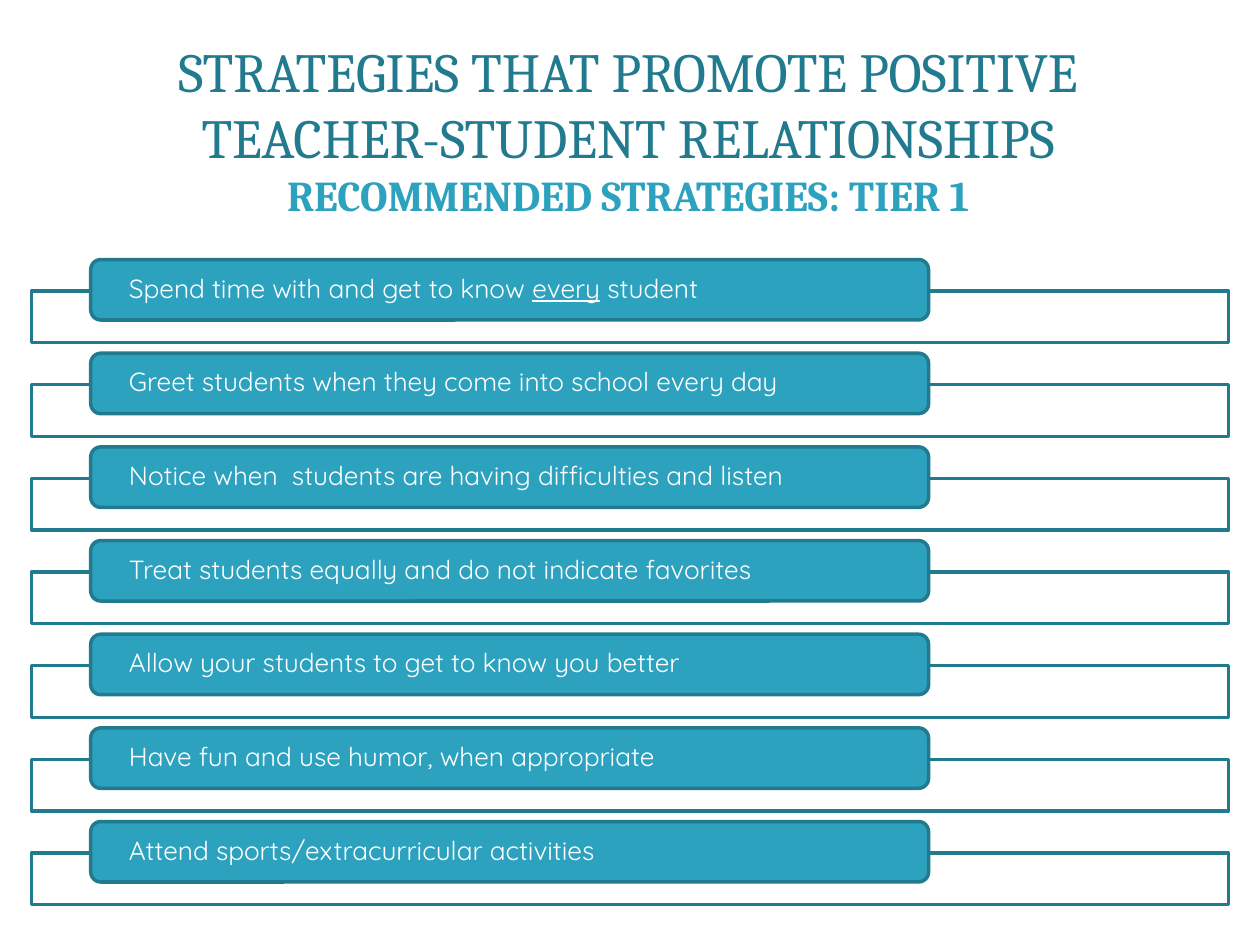
from dataclasses import dataclass

from pptx import Presentation
from pptx.dml.color import RGBColor
from pptx.enum.shapes import MSO_SHAPE
from pptx.enum.text import MSO_ANCHOR, MSO_AUTO_SIZE, PP_ALIGN
from pptx.util import Inches, Pt

RECT, PILL = MSO_SHAPE.RECTANGLE, MSO_SHAPE.ROUNDED_RECTANGLE
MIDDLE, LEFT, CENTER = MSO_ANCHOR.MIDDLE, PP_ALIGN.LEFT, PP_ALIGN.CENTER

TITLE = "STRATEGIES THAT PROMOTE POSITIVE TEACHER-STUDENT RELATIONSHIPS"
SUBTITLE = "RECOMMENDED STRATEGIES: TIER 1"
# Each strategy is a list of (text, underlined) runs.
STRATEGIES = [
    [("Spend time with and get to know ", False), ("every", True), (" student", False)],
    [("Greet students when they come into school every day", False)],
    [("Notice when  students are having difficulties and listen", False)],
    [("Treat students equally and do not indicate favorites", False)],
    [("Allow your students to get to know you better", False)],
    [("Have fun and use humor, when appropriate", False)],
    [("Attend sports/extracurricular activities", False)],
]


@dataclass(frozen=True)
class Theme:
    dark: RGBColor = RGBColor.from_string("227A8F")
    accent: RGBColor = RGBColor.from_string("2DA2BF")
    white: RGBColor = RGBColor.from_string("FFFFFF")
    heading_font: str = "Cambria"
    body_font: str = "Quicksand"
    title_size: float = 31.5
    subtitle_size: float = 24.3
    body_size: float = 15
    line_width: float = 2


THEME = Theme()
SLIDE_W, SLIDE_H = 10, 7.5
MARGIN = SLIDE_W / 40
FRAME_W, FRAME_H = SLIDE_W - 2 * MARGIN, 0.41
PILL_X, PILL_W, PILL_H = 0.72, 0.7 * FRAME_W, 0.48
PILL_RISE = 0.25
FIRST_Y, LAST_Y = 2.31, 6.77
PITCH = (LAST_Y - FIRST_Y) / (len(STRATEGIES) - 1)
TEXT_INSET = 0.28


def add_box(slide, kind, x, y, w, h, fill):
    s = slide.shapes.add_shape(kind, Inches(x), Inches(y), Inches(w), Inches(h))
    s.shadow.inherit = False
    s.fill.solid()
    s.fill.fore_color.rgb = fill
    s.line.color.rgb = THEME.dark
    s.line.width = Pt(THEME.line_width)
    return s


def format_title(title):
    title.left, title.top = Inches(0.47), Inches(0.45)
    title.width, title.height = Inches(9.03), Inches(1.14)
    tf = title.text_frame
    tf.auto_size = MSO_AUTO_SIZE.NONE
    tf.word_wrap = True
    tf.vertical_anchor = MIDDLE
    p = tf.paragraphs[0]
    p.alignment = CENTER
    p.font.name = THEME.heading_font
    lines = [(TITLE, THEME.title_size, THEME.dark, False),
             (SUBTITLE, THEME.subtitle_size, THEME.accent, True)]
    for i, (text, size, color, bold) in enumerate(lines):
        if i:
            p.add_line_break()
        r = p.add_run()
        r.text = text
        r.font.name = THEME.heading_font
        r.font.size = Pt(size)
        r.font.color.rgb = color
        r.font.bold = bold


def add_strategy(slide, y, runs):
    """Draw a wide frame with the strategy's pill overlapping its top edge."""
    add_box(slide, RECT, MARGIN, y, FRAME_W, FRAME_H, THEME.white)
    pill = add_box(slide, PILL, PILL_X, y - PILL_RISE, PILL_W, PILL_H, THEME.accent)
    tf = pill.text_frame
    tf.word_wrap = True
    tf.vertical_anchor = MIDDLE
    tf.margin_left = tf.margin_right = Inches(TEXT_INSET)
    tf.margin_top = tf.margin_bottom = 0
    p = tf.paragraphs[0]
    p.alignment = LEFT
    p.line_spacing = 0.9
    p.font.name = THEME.body_font
    p.font.size = Pt(THEME.body_size)
    p.font.color.rgb = THEME.white
    for text, underlined in runs:
        r = p.add_run()
        r.text = text
        if underlined:
            r.font.underline = True


def main():
    prs = Presentation()
    prs.slide_width, prs.slide_height = Inches(SLIDE_W), Inches(SLIDE_H)
    slide = prs.slides.add_slide(prs.slide_layouts[5])
    format_title(slide.shapes.title)
    for row, runs in enumerate(STRATEGIES):
        add_strategy(slide, FIRST_Y + row * PITCH, runs)
    prs.save("out.pptx")


if __name__ == "__main__":
    main()
